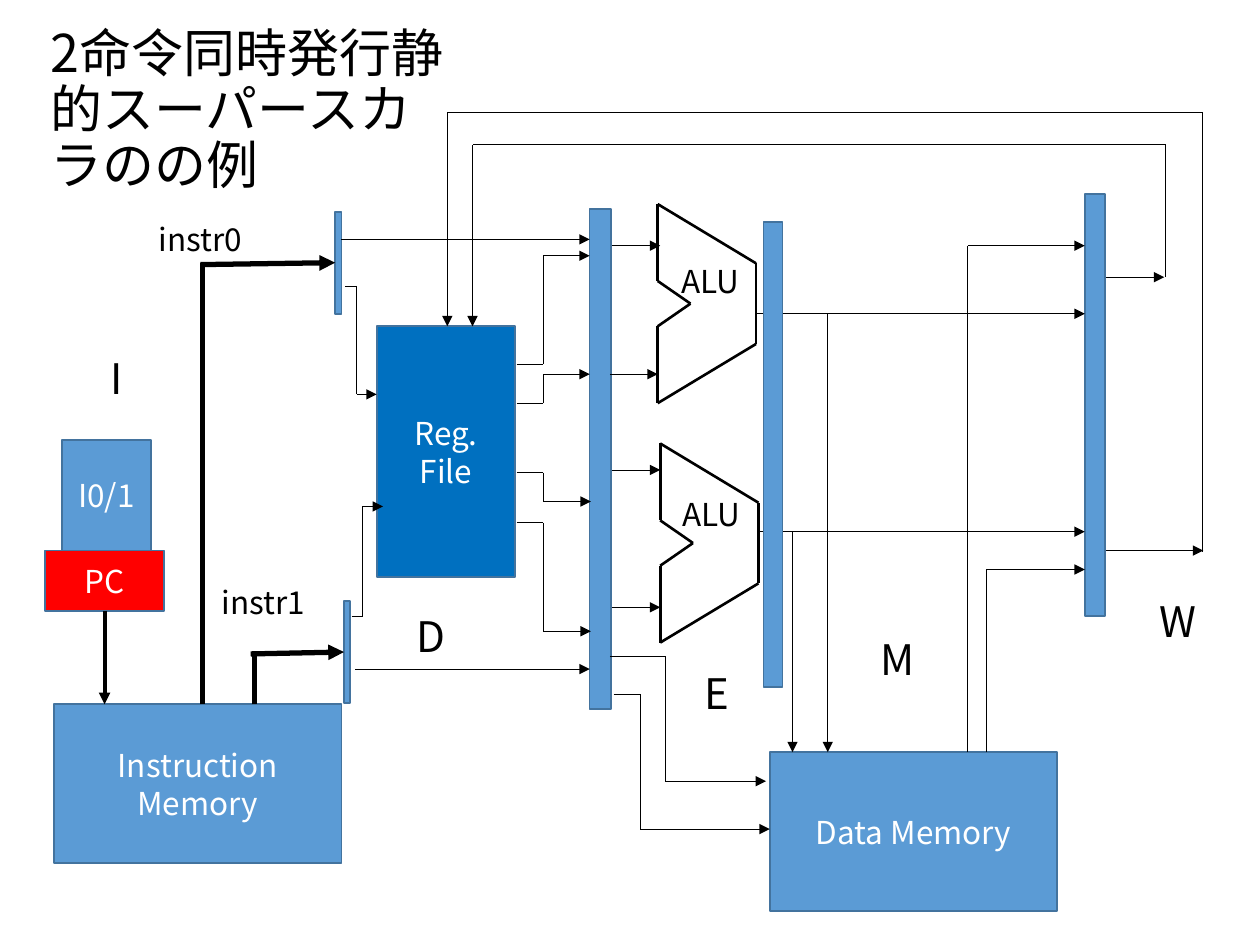
from itertools import pairwise

from lxml.etree import SubElement
from pptx import Presentation
from pptx.dml.color import RGBColor
from pptx.enum.shapes import MSO_CONNECTOR as Connector, MSO_SHAPE as Shape
from pptx.enum.text import MSO_ANCHOR as Anchor, PP_ALIGN as Align
from pptx.oxml.ns import qn
from pptx.util import Inches, Pt

FONT = "Noto Sans CJK JP"
BLACK = RGBColor(0x00, 0x00, 0x00)
WHITE = RGBColor(0xFF, 0xFF, 0xFF)
BLUE = RGBColor(0x5B, 0x9B, 0xD5)
DEEP_BLUE = RGBColor(0x00, 0x70, 0xC0)
RED = RGBColor(0xFF, 0x00, 0x00)
EDGE = RGBColor(0x43, 0x73, 0x9E)

TITLE = "2命令同時発行静的スーパースカラのの例"

BLOCKS = {
    "data memory": ("Data Memory", 6.11, 5.97, 2.28, 1.26, BLUE),
    "register file": ("Reg.\nFile", 2.99, 2.59, 1.1, 1.99, DEEP_BLUE),
    "pc": ("PC", 0.36, 4.37, 0.94, 0.48, RED),
    "instruction memory": ("Instruction Memory", 0.43, 5.59, 2.28, 1.26, BLUE),
    "increment": ("I0/1", 0.49, 3.49, 0.71, 0.88, BLUE),
    "latch 0": ("", 2.66, 1.68, 0.05, 0.81, BLUE),
    "latch 1": ("", 2.73, 4.77, 0.05, 0.81, BLUE),
    "decode register": ("", 4.68, 1.66, 0.17, 3.97, BLUE),
    "write register": ("", 8.61, 1.54, 0.16, 3.35, BLUE),
}
EXECUTE_REGISTER = ("", 6.06, 1.76, 0.15, 3.69, BLUE)

ALU_CORNERS = [(0, 0), (0.78, 0.47), (0.78, 1.11), (0, 1.58), (0, 0.97),
               (0.26, 0.79), (0, 0.61), (0, 0)]
ALU_ORIGINS = [(5.22, 1.62), (5.24, 3.52)]

FETCH_STEMS = [
    [(2.02, 5.59), (2.02, 5.17)],
    [(1.61, 5.59), (1.61, 2.09)],
]
FETCH_ARROWS = [
    ([(1.99, 5.19), (2.73, 5.17)], "latch 1"),
    ([(1.59, 2.1), (2.66, 2.09)], "latch 0"),
]

SIGNALS = [
    [(2.71, 1.9), (4.68, 1.9)],
    [(2.82, 5.31), (4.68, 5.31)],
    [(2.74, 2.27), (2.83, 2.27), (2.83, 3.13), (2.99, 3.13)],
    [(2.79, 4.89), (2.88, 4.89), (2.88, 4.02), (3.04, 4.02)],
    [(4.1, 2.89), (4.31, 2.89), (4.31, 2.03), (4.68, 2.03)],
    [(4.1, 3.2), (4.31, 3.2), (4.31, 2.97), (4.68, 2.97)],
    [(4.1, 3.75), (4.31, 3.75), (4.31, 3.98), (4.69, 3.98)],
    [(4.1, 4.15), (4.31, 4.15), (4.31, 5.01), (4.69, 5.01)],
    [(4.86, 1.95), (5.24, 1.95)],
    [(4.84, 2.97), (5.22, 2.97)],
    [(4.86, 3.73), (5.24, 3.73)],
    [(4.86, 4.82), (5.24, 4.82)],
    [(6.01, 2.49), (8.61, 2.49)],
    [(6.57, 2.49), (6.57, 5.97)],
    [(6.02, 4.22), (8.61, 4.22)],
    [(6.29, 4.22), (6.29, 5.97)],
    [(4.84, 5.21), (5.28, 5.21), (5.28, 6.2), (6.08, 6.2)],
    [(4.87, 5.51), (5.08, 5.51), (5.08, 6.58), (6.11, 6.58)],
    [(7.83, 5.97), (7.83, 4.52), (8.61, 4.52)],
    [(7.68, 5.97), (7.68, 1.95), (8.61, 1.95)],
    [(8.78, 2.2), (9.24, 2.2)],
    [(8.78, 4.37), (9.55, 4.37)],
    [(9.25, 2.2), (9.25, 1.15), (3.75, 1.15), (3.75, 2.59)],
    [(9.54, 4.38), (9.54, 0.89), (3.55, 0.89), (3.55, 2.59)],
]

LABELS = [
    ("ALU", 5.31, 2.03, 0.7, 0.4, 18),
    ("ALU", 5.32, 3.88, 0.7, 0.4, 18),
    ("instr0", 1.16, 1.7, 0.86, 0.4, 18),
    ("instr1", 1.66, 4.58, 0.86, 0.4, 18),
    ("I", 0.78, 2.75, 0.3, 0.5, 24),
    ("D", 3.21, 4.8, 0.45, 0.5, 24),
    ("E", 5.49, 5.25, 0.41, 0.5, 24),
    ("M", 6.89, 4.98, 0.51, 0.5, 24),
    ("W", 9.1, 4.68, 0.52, 0.5, 24),
]


def write(shape, text, size, color, align):
    shape.text_frame.text = text
    for para in shape.text_frame.paragraphs:
        para.alignment = align
        for span in para.runs:
            span.font.name = FONT
            span.font.size = Pt(size)
            span.font.color.rgb = color
            SubElement(span.font._element, qn("a:ea"), typeface=FONT)


def add_block(page, text, left, top, width, height, fill):
    block = page.shapes.add_shape(Shape.RECTANGLE, *map(Inches, (left, top, width, height)))
    block.shadow.inherit = False
    block.fill.solid()
    block.fill.fore_color.rgb = fill
    block.line.color.rgb = EDGE
    block.line.width = Pt(1)
    if text:
        block.text_frame.word_wrap = True
        block.text_frame.vertical_anchor = Anchor.MIDDLE
        write(block, text, 18, WHITE, Align.CENTER)
    return block


def add_label(page, text, left, top, width, height, size):
    label = page.shapes.add_textbox(*map(Inches, (left, top, width, height)))
    label.text_frame.word_wrap = False
    write(label, text, size, BLACK, Align.LEFT)
    return label


def add_route(page, points, weight, arrow=True):
    lines = []
    for start, end in pairwise(points):
        line = page.shapes.add_connector(Connector.STRAIGHT, *map(Inches, start + end))
        line.line.color.rgb = BLACK
        line.line.width = Pt(weight)
        SubElement(line._element.spPr, qn("a:effectLst"))
        lines.append(line)
    if arrow:
        SubElement(lines[-1].line._get_or_add_ln(), qn("a:tailEnd"), type="triangle")
    return lines


def main():
    deck = Presentation()
    deck.slide_width, deck.slide_height = Inches(10), Inches(7.5)
    page = deck.slides.add_slide(deck.slide_layouts[6])

    title = add_label(page, TITLE, 0.3, 0.16, 3.45, 1.45, 29.7)
    title.text_frame.word_wrap = True
    title.text_frame.vertical_anchor = Anchor.MIDDLE
    title.text_frame.paragraphs[0].line_spacing = 0.9

    for left, top in ALU_ORIGINS:
        add_route(page, [(left + x, top + y) for x, y in ALU_CORNERS], 1.5, arrow=False)

    blocks = {name: add_block(page, *block) for name, block in BLOCKS.items()}

    address = add_route(page, [(0.83, 4.85), (0.83, 5.59)], 2.25)[0]
    address.begin_connect(blocks["pc"], 2)
    for points in FETCH_STEMS:
        add_route(page, points, 3, arrow=False)
    for points, latch in FETCH_ARROWS:
        add_route(page, points, 3)[0].end_connect(blocks[latch], 1)
    for points in SIGNALS:
        add_route(page, points, 0.5)

    add_block(page, *EXECUTE_REGISTER)
    for label in LABELS:
        add_label(page, *label)

    deck.save("out.pptx")


if __name__ == "__main__":
    main()
